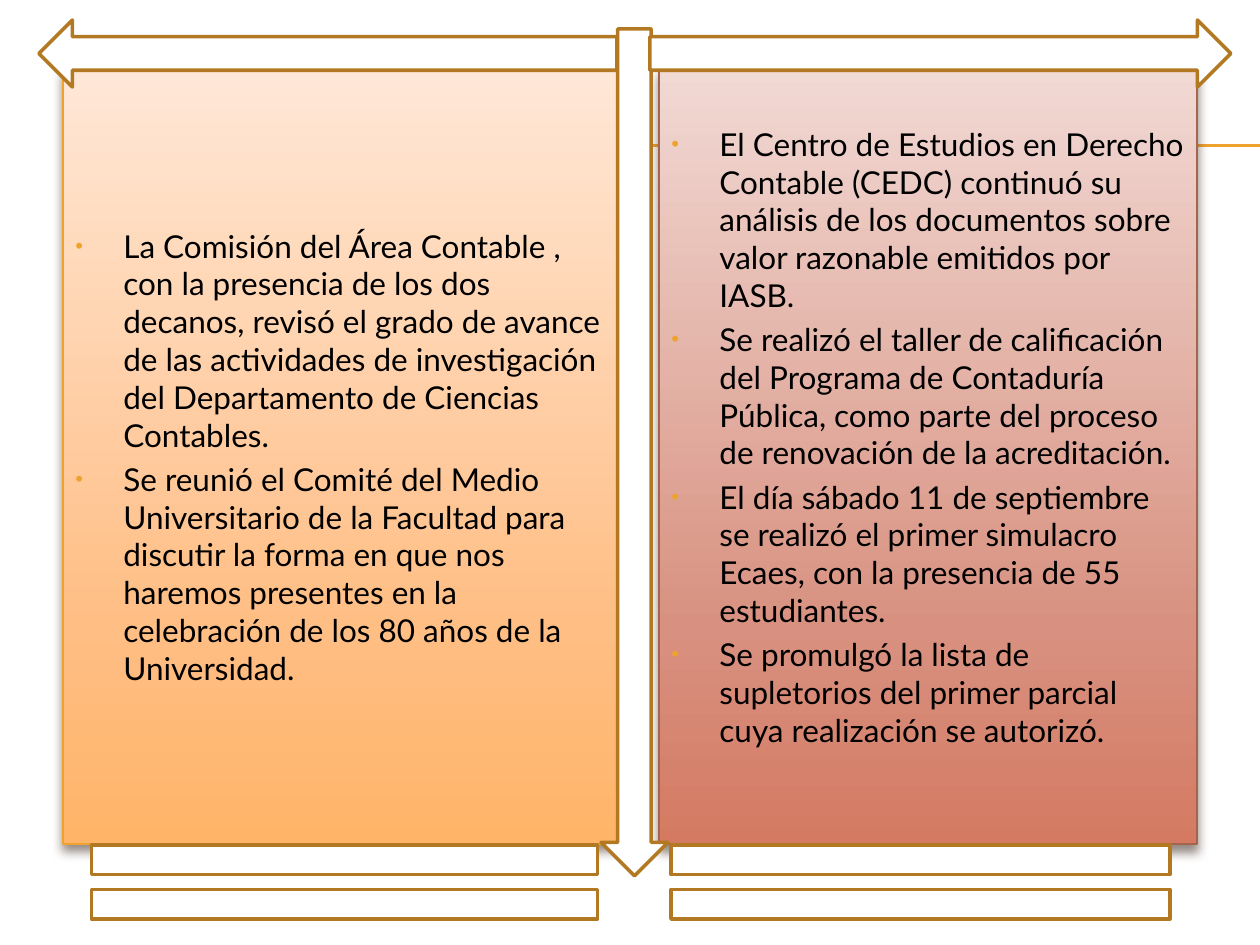
from copy import deepcopy

from lxml.etree import SubElement
from pptx import Presentation
from pptx.dml.color import RGBColor
from pptx.enum.shapes import MSO_CONNECTOR, MSO_SHAPE
from pptx.enum.text import MSO_ANCHOR, PP_ALIGN
from pptx.oxml.ns import qn
from pptx.util import Pt

PX = 914400 / 126
WIDTH, HEIGHT = 1260, 945
FONT = "Lato"
BLACK = RGBColor(0x00, 0x00, 0x00)
WHITE = RGBColor(0xFF, 0xFF, 0xFF)
AMBER = RGBColor(0xF0, 0xA2, 0x2E)
BROWN = RGBColor(0xB2, 0x78, 0x22)
RUST = RGBColor(0xA5, 0x64, 0x4E)
SHADOW = RGBColor(0x4E, 0x3B, 0x30)
ORANGE_STOPS = (RGBColor(0xFF, 0xE7, 0xD7), RGBColor(0xFF, 0xBE, 0x84), RGBColor(0xFF, 0xB4, 0x68))
RED_STOPS = (RGBColor(0xF1, 0xD9, 0xD4), RGBColor(0xD8, 0x91, 0x80), RGBColor(0xD4, 0x7A, 0x62))
STOP_POSITIONS = (0, 0.72, 1)

LEFT_ITEMS = (
    "La Comisión del Área Contable , con la presencia de los dos decanos, revisó el grado de avance "
    "de las actividades de investigación del Departamento de Ciencias Contables.",
    "Se reunió el Comité del Medio Universitario de la Facultad para discutir la forma en que nos "
    "haremos presentes en la celebración de los 80 años de la Universidad.",
)
RIGHT_ITEMS = (
    "El Centro de Estudios en Derecho Contable (CEDC) continuó su análisis de los documentos sobre "
    "valor razonable emitidos por IASB.",
    "Se realizó el taller de calificación del Programa de Contaduría Pública, como parte del proceso "
    "de renovación de la acreditación.",
    "El día sábado 11 de septiembre se realizó el primer simulacro Ecaes, con la presencia de 55 "
    "estudiantes.",
    "Se promulgó la lista de supletorios del primer parcial cuya realización se autorizó.",
)


def emu(pixels):
    return round(pixels * PX)


def add_element(parent, tag, **attributes):
    return SubElement(parent, qn(tag), attributes)


def add_outlined_shape(slide, kind, box, line_color, line_width):
    shape = slide.shapes.add_shape(kind, *map(emu, box))
    shape.line.color.rgb = line_color
    shape.line.width = Pt(line_width)
    shape.shadow.inherit = False
    return shape


def add_figure(slide, kind, box):
    shape = add_outlined_shape(slide, kind, box, BROWN, 2)
    shape.fill.solid()
    shape.fill.fore_color.rgb = WHITE


def fill_gradient(shape, colors):
    shape.fill.gradient()
    shape.fill.gradient_angle = 270
    stop_list = shape.fill._xPr.find(".//" + qn("a:gsLst"))
    stop_list.append(deepcopy(stop_list[0]))
    for stop, position, color in zip(shape.fill.gradient_stops, STOP_POSITIONS, colors):
        stop.position = position
        stop.color.rgb = color


def add_shadow(shape):
    effects = shape._element.spPr.find(qn("a:effectLst"))
    shadow = add_element(effects, "a:outerShdw", blurRad=str(Pt(6)), dist=str(Pt(4)),
                         dir="5400000", rotWithShape="0")
    color = add_element(shadow, "a:srgbClr", val=str(SHADOW))
    add_element(color, "a:alpha", val="60000")


def write_bullet(paragraph, text, *, size=18, color=BLACK, indent=48, space_before=0):
    properties = paragraph._p.get_or_add_pPr()
    properties.set("marL", str(emu(indent)))
    properties.set("indent", str(-emu(indent)))
    paragraph.alignment = PP_ALIGN.LEFT
    paragraph.space_before = Pt(space_before)
    add_element(add_element(properties, "a:buClr"), "a:srgbClr", val=str(AMBER))
    add_element(properties, "a:buSzPct", val="70000")
    add_element(properties, "a:buFont", typeface="Arial")
    add_element(properties, "a:buChar", char="•")
    run = paragraph.add_run()
    run.text = text
    run.font.name = FONT
    run.font.size = Pt(size)
    run.font.color.rgb = color


def add_panel(slide, box, items, stops, line_color, bottom_margin=6):
    panel = add_outlined_shape(slide, MSO_SHAPE.RECTANGLE, box, line_color, 0.79)
    fill_gradient(panel, stops)
    add_shadow(panel)
    frame = panel.text_frame
    frame.word_wrap = True
    frame.vertical_anchor = MSO_ANCHOR.MIDDLE
    frame.margin_bottom = emu(bottom_margin)
    for index, item in enumerate(items):
        paragraph = frame.add_paragraph() if index else frame.paragraphs[0]
        write_bullet(paragraph, item, space_before=3.6 if index else 0)


def add_double_rule(slide, left, top, width):
    for y in (top, top + 1):
        ends = map(emu, (left, y, left + width, y))
        rule = slide.shapes.add_connector(MSO_CONNECTOR.STRAIGHT, *ends)
        rule.line.color.rgb = AMBER
        rule.line.width = Pt(0.75)
        add_element(rule._element.spPr, "a:effectLst")


def add_arrow_frame(slide, left, top, width, height):
    thickness, center = 67, left + 595
    add_figure(slide, MSO_SHAPE.DOWN_ARROW,
               (center - thickness // 2, top + 9, thickness, height - 9))
    add_figure(slide, MSO_SHAPE.RIGHT_ARROW,
               (center + 16, top, left + width - center - 16, thickness))
    add_figure(slide, MSO_SHAPE.LEFT_ARROW, (left, top, center - left - 17, thickness))


def add_base_bars(slide, left, top, width, height):
    add_figure(slide, MSO_SHAPE.MATH_EQUAL, (left, top, 689, height))
    add_figure(slide, MSO_SHAPE.MATH_EQUAL, (left + 581, top, width - 581, height))


def main():
    presentation = Presentation()
    presentation.slide_width = emu(WIDTH)
    presentation.slide_height = emu(HEIGHT)
    slide = presentation.slides.add_slide(presentation.slide_layouts[6])
    add_double_rule(slide, 71, 145, WIDTH - 71)
    add_panel(slide, (63, 69, 557, 775), LEFT_ITEMS, ORANGE_STOPS, AMBER)
    add_panel(slide, (659, 69, 538, 775), RIGHT_ITEMS, RED_STOPS, RUST, bottom_margin=46)
    add_arrow_frame(slide, 39, 20, 1192, 856)
    add_base_bars(slide, 0, 819, WIDTH, 126)
    presentation.save("out.pptx")


if __name__ == "__main__":
    main()
